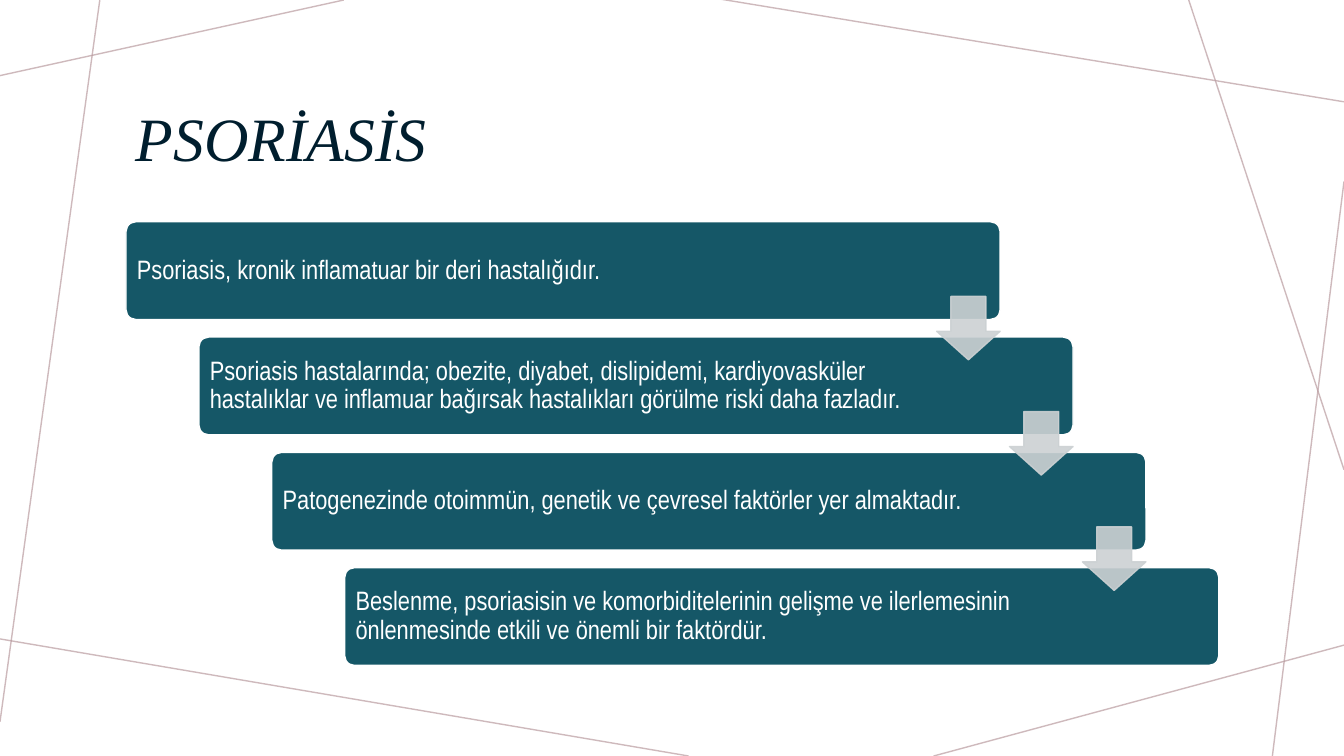
"""Build the psoriasis slide: a staircase of four statements joined by arrows."""
from lxml import etree
from pptx import Presentation
from pptx import util as u
from pptx.dml.color import RGBColor
from pptx.enum import shapes, text
from pptx.oxml.ns import qn

TITLE = "PSORİASİS"
STEPS = [
    "Psoriasis, kronik inflamatuar bir deri hastalığıdır.",
    "Psoriasis hastalarında; obezite, diyabet, dislipidemi, kardiyovasküler "
    "hastalıklar ve inflamuar bağırsak hastalıkları görülme riski daha fazladır.",
    "Patogenezinde otoimmün, genetik ve çevresel faktörler yer almaktadır.",
    "Beslenme, psoriasisin ve komorbiditelerinin gelişme ve ilerlemesinin "
    "önlenmesinde etkili ve önemli bir faktördür.",
]
WIDTH, HEIGHT = 13.33, 7.5
BACKGROUND_LINES = [
    (3.41, 0, 0, 0.75),
    (0.99, 0, 0, 7.16),
    (6.83, HEIGHT, -0.05, 6.33),
    (WIDTH, 6.4, 9.26, HEIGHT),
    (WIDTH, 1.8, 12.62, HEIGHT),
    (WIDTH, 4.66, 11.79, 0),
    (WIDTH, 1.01, 7.14, -0.01),
]
TEAL, GREY, MAUVE, NAVY, WHITE = "155767", "CCD1D3", "BA9CA0", "001E2E", "FFFFFF"
LEFT, TOP = 1.25, 2.2
BAR_W, BAR_H = 8.67, 0.97
STEP_X, STEP_Y = 0.723, 1.144
ARROW = 0.63
ARROW_DROP = 0.74
INSET, ARROW_ROOM = 0.08, 1.44


def paint(color_format, color, alpha=100):
    """Set a solid fill or line colour with an opacity in percent."""
    color_format.solid()
    color_format.fore_color.rgb = RGBColor.from_string(color)
    if alpha < 100:
        tag = color_format.fore_color._xFill.find(qn("a:srgbClr"))
        etree.SubElement(tag, qn("a:alpha"), val=str(alpha * 1000))


def add_line(s, ends):
    """Draw one thin translucent background line."""
    line = s.shapes.add_connector(shapes.MSO_CONNECTOR.STRAIGHT, *map(u.Inches, ends))
    line.line.width = u.Pt(1)
    paint(line.line.fill, MAUVE, 70)
    etree.SubElement(line._element.spPr, qn("a:effectLst"))


def add_preset(s, kind, box, adjustments, fill, outline, alpha=100):
    """Add a flat preset shape with a one-point outline."""
    sp = s.shapes.add_shape(kind, *map(u.Inches, box))
    sp.shadow.inherit = False
    for i, value in enumerate(adjustments):
        sp.adjustments[i] = value
    paint(sp.fill, fill, alpha)
    sp.line.width = u.Pt(1)
    paint(sp.line.fill, outline, alpha)
    return sp


def write(sp, words, font, size, color, spacing, italic=False):
    """Fill a shape with one left-aligned, vertically centred paragraph."""
    tf = sp.text_frame
    tf.word_wrap = True
    tf.vertical_anchor = text.MSO_ANCHOR.MIDDLE
    p = tf.paragraphs[0]
    p.text = words
    p.alignment = text.PP_ALIGN.LEFT
    p.line_spacing = spacing
    r = p.runs[0]
    r.font.name, r.font.size, r.font.italic = font, u.Pt(size), italic
    r.font.color.rgb = RGBColor.from_string(color)
    return tf


def main():
    """Compose and save the slide."""
    prs = Presentation()
    prs.slide_width, prs.slide_height = u.Inches(WIDTH), u.Inches(HEIGHT)
    s = prs.slides.add_slide(prs.slide_layouts[6])
    for ends in BACKGROUND_LINES:
        add_line(s, ends)

    title = s.shapes.add_textbox(*map(u.Inches, (LEFT, 0.58, 10.83, 1.51)))
    write(title, TITLE, "Times New Roman", 44, NAVY, 1.07, italic=True)

    corners = [(LEFT + i * STEP_X, TOP + i * STEP_Y) for i in range(len(STEPS))]
    for (x, y), words in zip(corners, STEPS):
        bar = add_preset(s, shapes.MSO_SHAPE.ROUNDED_RECTANGLE,
                         (x, y, BAR_W, BAR_H), [0.1], TEAL, WHITE)
        tf = write(bar, words, "Arial Narrow", 19, WHITE, 0.9)
        tf.margin_left = tf.margin_top = tf.margin_bottom = u.Inches(INSET)
        tf.margin_right = u.Inches(ARROW_ROOM)
    for x, y in corners[:-1]:
        add_preset(s, shapes.MSO_SHAPE.DOWN_ARROW,
                   (x + BAR_W - ARROW, y + ARROW_DROP, ARROW, ARROW),
                   [0.45, 0.55][::-1], GREY, GREY, 90)
    prs.save("out.pptx")


if __name__ == "__main__":
    main()
